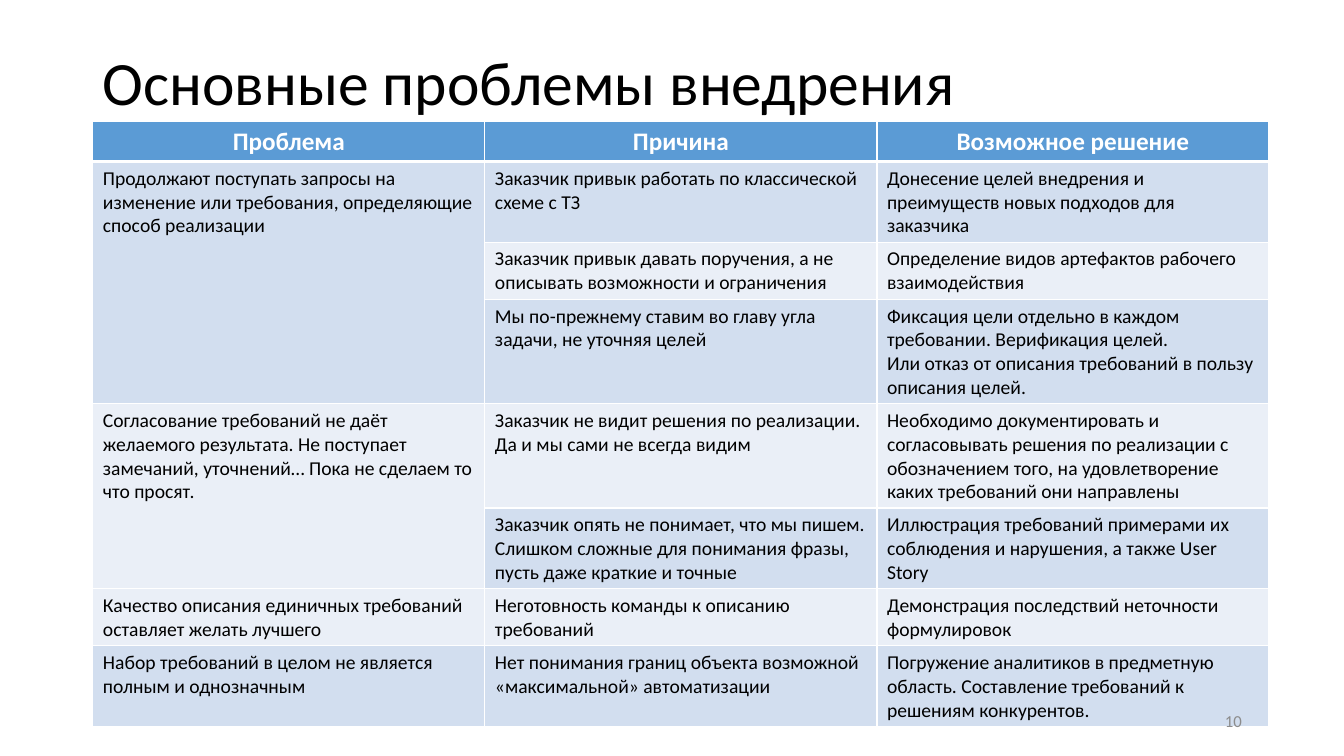
from dataclasses import dataclass

from lxml import etree
from pptx import Presentation, util as u
from pptx.dml.color import RGBColor
from pptx.enum import text as t
from pptx.oxml import ns


@dataclass(frozen=True)
class Theme:
    font: str = "Calibri"
    ink: str = "000000"
    paper: str = "FFFFFF"
    head: str = "5B9BD5"
    bands: tuple = ("EAEFF7", "D2DEEF")
    grey: str = "8C8C8C"
    title: int = 44
    label: int = 18
    body: int = 14
    small: int = 12


THEME = Theme()
HEADS = ["Проблема", "Причина", "Возможное решение"]

# Each problem with its pairs of cause and solution
ISSUES = [
    ("Продолжают поступать запросы на изменение или требования, определяющие способ реализации", [
        ("Заказчик привык работать по классической схеме с ТЗ",
         "Донесение целей внедрения и преимуществ новых подходов для заказчика"),
        ("Заказчик привык давать поручения, а не описывать возможности и ограничения",
         "Определение видов артефактов рабочего взаимодействия"),
        ("Мы по-прежнему ставим во главу угла задачи, не уточняя целей",
         "Фиксация цели отдельно в каждом требовании. Верификация целей.\n"
         "Или отказ от описания требований в пользу описания целей."),
    ]),
    ("Согласование требований не даёт желаемого результата. Не поступает замечаний, уточнений… "
     "Пока не сделаем то что просят.", [
         ("Заказчик не видит решения по реализации. Да и мы сами не всегда видим",
          "Необходимо документировать и согласовывать решения по реализации с обозначением того, "
          "на удовлетворение каких требований они направлены"),
         ("Заказчик опять не понимает, что мы пишем. Слишком сложные для понимания фразы, "
          "пусть даже краткие и точные",
          "Иллюстрация требований примерами их соблюдения и нарушения, а также User Story"),
     ]),
    ("Качество описания единичных требований оставляет желать лучшего", [
        ("Неготовность команды к описанию требований",
         "Демонстрация последствий неточности формулировок"),
    ]),
    ("Набор требований в целом не является полным и однозначным", [
        ("Нет понимания границ объекта возможной «максимальной» автоматизации",
         "Погружение аналитиков в предметную область. Составление требований к решениям конкурентов."),
    ]),
]
HEIGHTS = [1.02, 2.01, 1.42, 1.42, 2.59, 2.01, 1.42, 2.01]


def write(frame, words, size, color, bold=False, **para):
    """Fill a text frame and format all its paragraphs."""
    frame.text = words
    for line in frame.paragraphs:
        for key, val in para.items():
            setattr(line, key, val)
        look = {"name": THEME.font, "size": u.Pt(size), "bold": bold}
        for run in line.runs:
            for key, val in look.items():
                setattr(run.font, key, val)
            run.font.color.rgb = RGBColor.from_string(color)


def label(slide, box, words, size, color, **para):
    """Place one line of text, centred vertically in the box."""
    frame = slide.shapes.add_textbox(*map(u.Cm, box)).text_frame
    look = {"word_wrap": True, "vertical_anchor": t.MSO_ANCHOR.MIDDLE}
    for key, val in look.items():
        setattr(frame, key, val)
    write(frame, words, size, color, **para)


def edge(cell, base):
    """Draw the cell borders; base is the lower line width in points."""
    props = cell._tc.get_or_add_tcPr()
    for pos, (side, width) in enumerate(zip("LRTB", (1, 1, 1, base))):
        line = etree.Element(ns.qn("a:ln" + side), w=str(u.Pt(width)))
        fill = etree.SubElement(line, ns.qn("a:solidFill"))
        etree.SubElement(fill, ns.qn("a:srgbClr"), val=THEME.paper)
        props.insert(pos, line)


def paint(cell, color, base=1):
    cell.fill.solid()
    cell.fill.fore_color.rgb = RGBColor.from_string(color)
    edge(cell, base)


def grid(slide, box):
    """Build the table of problems, causes and solutions."""
    table = slide.shapes.add_table(len(HEIGHTS), len(HEADS), *map(u.Cm, box)).table
    for col in table.columns:
        col.width = u.Cm(box[2] / len(HEADS))
    for row, height in zip(table.rows, HEIGHTS):
        row.height = u.Cm(height)

    # Header
    for col, words in enumerate(HEADS):
        cell = table.cell(0, col)
        paint(cell, THEME.head, 3)
        write(cell.text_frame, words, THEME.label, THEME.paper, True,
              alignment=t.PP_ALIGN.CENTER)

    # Banded body
    for row in range(1, len(HEIGHTS)):
        for col in range(len(HEADS)):
            paint(table.cell(row, col), THEME.bands[row % 2])

    # Problems, each merged over its causes
    row = 1
    for issue, pairs in ISSUES:
        first = table.cell(row, 0)
        write(first.text_frame, issue, THEME.body, THEME.ink)
        if len(pairs) > 1:
            first.merge(table.cell(row + len(pairs) - 1, 0))
        for pair in pairs:
            for col, words in enumerate(pair, 1):
                write(table.cell(row, col).text_frame, words, THEME.body, THEME.ink)
            row += 1


def build(slide, box):
    """Lay out title, table and page number inside the box."""
    left, top, wide, high = box
    label(slide, (left, top, wide, 2.69), "Основные проблемы внедрения",
          THEME.title, THEME.ink, line_spacing=0.9)
    grid(slide, (left, top + 2.24, wide, sum(HEIGHTS)))
    label(slide, (left + wide - 8.05, top + high - 1.02, 7.62, 1.02), "10",
          THEME.small, THEME.grey, alignment=t.PP_ALIGN.RIGHT)


def main():
    deck = Presentation()
    deck.slide_width, deck.slide_height = u.Cm(33.87), u.Cm(19.05)
    build(deck.slides.add_slide(deck.slide_layouts[6]), (2.34, 0.81, 29.64, 17.86))
    deck.save("out.pptx")


if __name__ == "__main__":
    main()
